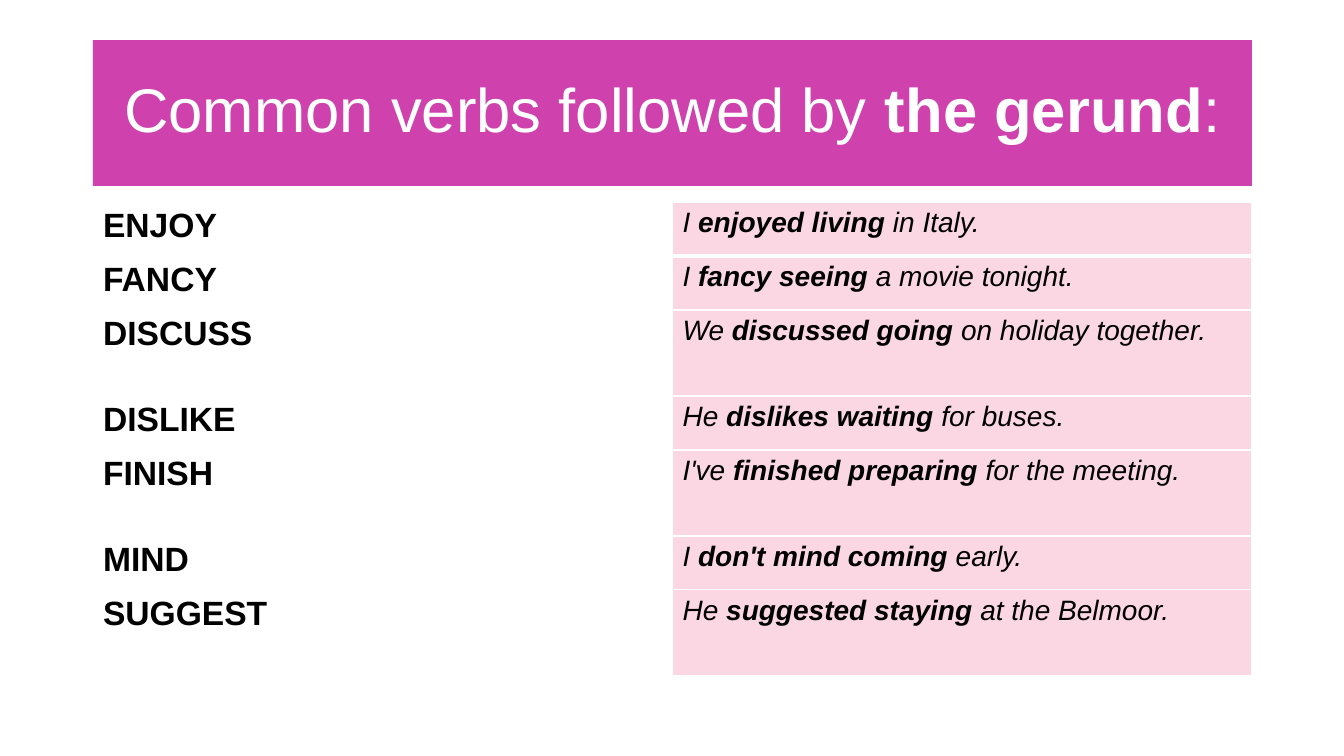
from lxml.etree import SubElement
from pptx import Presentation
from pptx.dml.color import RGBColor
from pptx.enum.text import MSO_ANCHOR, PP_ALIGN
from pptx.oxml.ns import qn
from pptx.util import Emu, Pt

EMU_PER_PX = 914400 / 100.8
SLIDE_SIZE = (1344, 756)
TITLE_BOX = (93, 40, 1159, 146)
TABLE_BOX = (93, 202, 1159, 474)

WHITE, BLACK, MAGENTA, PINK = "FFFFFF", "000000", "CF41AD", "FAD7E3"
TITLE_FORMAT = {"name": "Arial", "size": Pt(44), "bold": False}
VERB_FORMAT = {"name": "Arial", "size": Pt(24), "bold": True}
EXAMPLE_FORMAT = {"name": "Arial", "size": Pt(20), "bold": False, "italic": True}

TITLE = [("Common verbs followed by ", {}), ("the gerund", {"bold": True}), (":", {})]

SHORT_ROW, TALL_ROW = 54, 86
# Verb, example before the stressed words, stressed words, rest, row height
VERBS = [
    ("ENJOY", "I ", "enjoyed living ", "in Italy.", SHORT_ROW),
    ("FANCY", "I ", "fancy seeing ", "a movie tonight.", SHORT_ROW),
    ("DISCUSS", "We ", "discussed going ", "on holiday together.", TALL_ROW),
    ("DISLIKE", "He ", "dislikes waiting ", "for buses.", SHORT_ROW),
    ("FINISH", "I've ", "finished preparing ", "for the meeting.", TALL_ROW),
    ("MIND", "I ", "don't mind coming ", "early.", SHORT_ROW),
    ("SUGGEST", "He ", "suggested staying ", "at the Belmoor.", TALL_ROW),
]


def px(length):
    return Emu(round(length * EMU_PER_PX))


def color(hex_value):
    return RGBColor.from_string(hex_value)


def set_fill(target, hex_value):
    target.fill.solid()
    target.fill.fore_color.rgb = color(hex_value)


def write_spans(para, spans, base_format, hex_value):
    """Add each (text, changes) pair as a run in the base format."""
    for text, changes in spans:
        span = para.add_run()
        span.text = text
        for name, value in {**base_format, **changes}.items():
            setattr(span.font, name, value)
        span.font.color.rgb = color(hex_value)


def set_borders(cell, widths):
    """Draw white borders; widths are points for left, right, top, bottom."""
    properties = cell._tc.get_or_add_tcPr()
    for side, width in zip("LRTB", widths):
        line = SubElement(properties, qn(f"a:ln{side}"), w=str(Pt(width)))
        fill = SubElement(line, qn("a:solidFill"))
        SubElement(fill, qn("a:srgbClr"), val=WHITE)


def add_title(page, box):
    title = page.shapes.title
    title.left, title.top, title.width, title.height = map(px, box)
    set_fill(title, MAGENTA)
    title.text_frame.word_wrap = True
    title.text_frame.vertical_anchor = MSO_ANCHOR.MIDDLE
    para = title.text_frame.paragraphs[0]
    para.alignment = PP_ALIGN.CENTER
    para.line_spacing = 0.9
    write_spans(para, TITLE, TITLE_FORMAT, WHITE)


def add_verb_table(page, box):
    left, top, width, height = box
    table = page.shapes.add_table(
        len(VERBS), 2, px(left), px(top), px(width), px(height)
    ).table
    for row, (verb, start, stressed, rest, row_height) in enumerate(VERBS):
        table.rows[row].height = px(row_height)
        example = [(start, {}), (stressed, {"bold": True}), (rest, {})]
        contents = [
            ([(verb, {})], VERB_FORMAT, WHITE),
            (example, EXAMPLE_FORMAT, PINK),
        ]
        borders = (1, 1, 3 if row == 1 else 1, 3 if row == 0 else 1)
        for column, (spans, text_format, background) in enumerate(contents):
            cell = table.cell(row, column)
            set_borders(cell, borders)
            set_fill(cell, background)
            write_spans(cell.text_frame.paragraphs[0], spans, text_format, BLACK)


def main():
    deck = Presentation()
    deck.slide_width, deck.slide_height = map(px, SLIDE_SIZE)
    page = deck.slides.add_slide(deck.slide_layouts.get_by_name("Title Only"))
    add_title(page, TITLE_BOX)
    add_verb_table(page, TABLE_BOX)
    deck.save("out.pptx")


if __name__ == "__main__":
    main()
